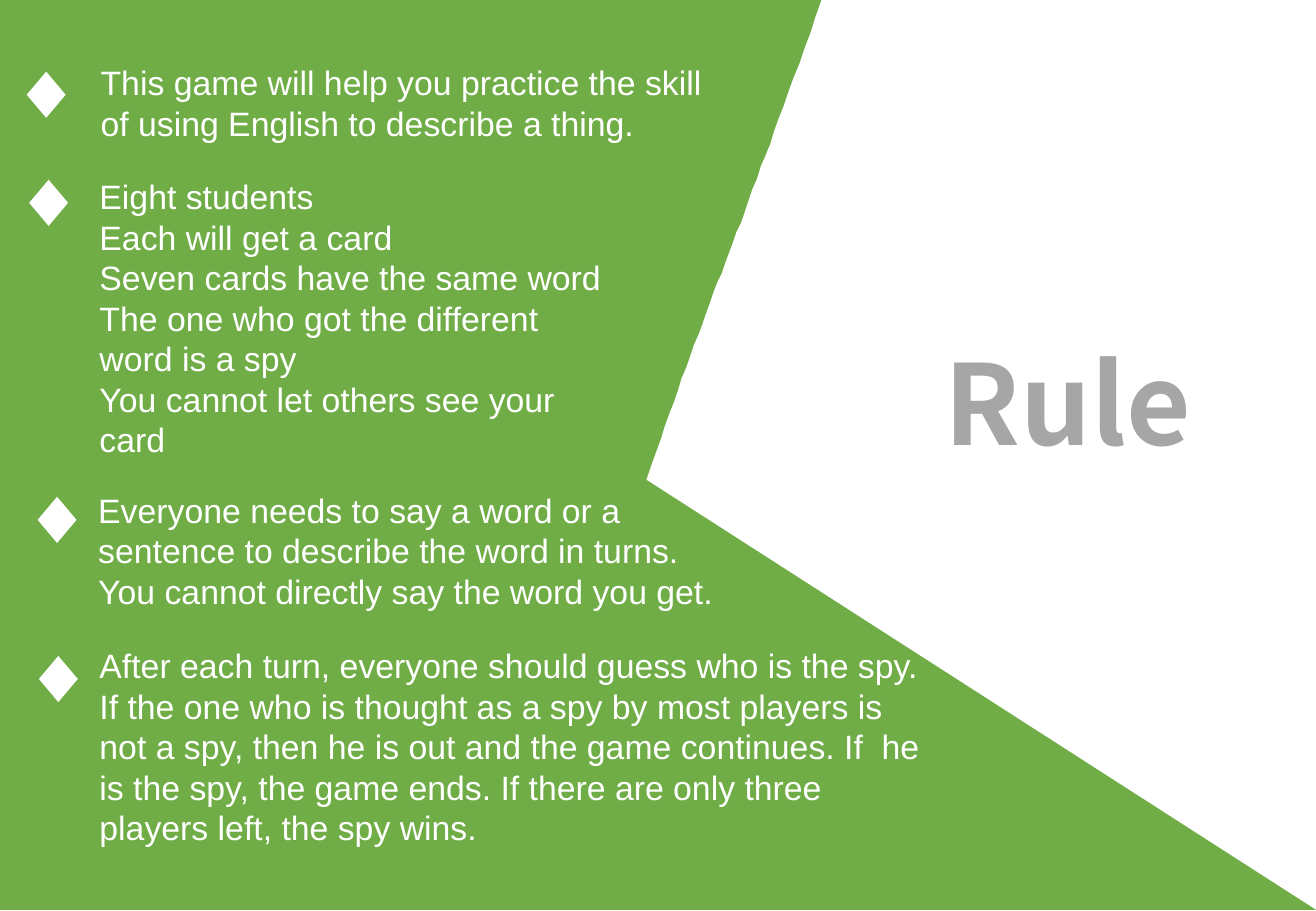
from dataclasses import dataclass
from pptx import Presentation
from pptx.dml.color import RGBColor as Rgb
from pptx.enum.shapes import MSO_SHAPE as Kind
from pptx.enum.text import MSO_ANCHOR as Anchor, MSO_AUTO_SIZE as Auto, PP_ALIGN as Align
from pptx.util import Pt

SCALE = 9144


@dataclass(frozen=True)
class Theme:
    green: str = "70AD47"
    white: str = "FFFFFF"
    gray: str = "A6A6A6"
    body: str = "Arial"
    head: str = "Noto Sans CJK SC"
    small: int = 20
    large: int = 66


class Deck:
    def __init__(self, theme, width, height):
        self.theme = theme
        self.prs = Presentation()
        self.prs.slide_width = width * SCALE
        self.prs.slide_height = height * SCALE
        self.slide = self.prs.slides.add_slide(self.prs.slide_layouts[5])

    def paint(self, shape, color):
        shape.shadow.inherit = False
        shape.fill.solid()
        shape.fill.fore_color.rgb = Rgb.from_string(color)
        shape.line.fill.background()

    def add_text(self, para, text, font, size, color, bold=False):
        run = para.add_run()
        run.text = text
        run.font.name = font
        run.font.size = Pt(size)
        run.font.bold = bold
        run.font.color.rgb = Rgb.from_string(color)

    def title(self, text, left, top, width, height):
        shape = self.slide.shapes.title
        shape.left, shape.top = left * SCALE, top * SCALE
        shape.width, shape.height = width * SCALE, height * SCALE
        frame = shape.text_frame
        frame.word_wrap = False
        frame.auto_size = Auto.SHAPE_TO_FIT_TEXT
        frame.vertical_anchor = Anchor.TOP
        para = frame.paragraphs[0]
        para.alignment = Align.LEFT
        look = self.theme
        self.add_text(para, text, look.head, look.large, look.gray, True)

    def panel(self, points):
        pen = self.slide.shapes.build_freeform(*points[0], scale=SCALE)
        pen.add_line_segments(points[1:], close=True)
        self.paint(pen.convert_to_shape(), self.theme.green)

    def mark(self, left, top):
        box = [n * SCALE for n in (left, top, 32, 38)]
        shape = self.slide.shapes.add_shape(Kind.FLOWCHART_DECISION, *box)
        self.paint(shape, self.theme.white)

    def note(self, lines, left, top, width, height):
        box = [n * SCALE for n in (left, top, width, height)]
        frame = self.slide.shapes.add_textbox(*box).text_frame
        frame.word_wrap = True
        look = self.theme
        for i, line in enumerate(lines):
            para = frame.add_paragraph() if i else frame.paragraphs[0]
            self.add_text(para, line, look.body, look.small, look.white)


def curve(a, b, c, d, steps=40):
    for i in range(steps + 1):
        t = i / steps
        u = 1 - t
        yield tuple(
            round(u**3 * p + 3 * u * u * t * q + 3 * u * t * t * r + t**3 * s, 2)
            for p, q, r, s in zip(a, b, c, d)
        )


RULES = [
    ((22, 59), (73, 46, 534, 77), [
        "This game will help you practice the skill of using English to describe a thing.",
    ]),
    ((24, 148), (72, 140, 438, 313), [
        "Eight students",
        "Each will get a card",
        "Seven cards have the same word",
        "The one who got the different word is a spy",
        "You cannot let others see your card",
    ]),
    ((31, 409), (71, 398, 531, 111), [
        "Everyone needs to say a word or a sentence to describe the word in turns. "
        "You cannot directly say the word you get.",
    ]),
    ((32, 540), (72, 526, 705, 178), [
        "After each turn, everyone should guess who is the spy. "
        "If the one who is thought as a spy by most players is not a spy, "
        "then he is out and the game continues. If  he is the spy, the game ends. "
        "If there are only three players left, the spy wins.",
    ]),
]


def main():
    deck = Deck(Theme(), 1083, 750)
    edge = curve((676, 0), (611, 186), (586, 237), (532, 395))
    deck.panel([(0, 749), (0, 0), *edge, (1083, 749)])
    deck.title("Rule", 767, 270, 226, 121)
    for spot, box, lines in RULES:
        deck.mark(*spot)
        deck.note(lines, *box)
    deck.prs.save("out.pptx")


if __name__ == "__main__":
    main()
